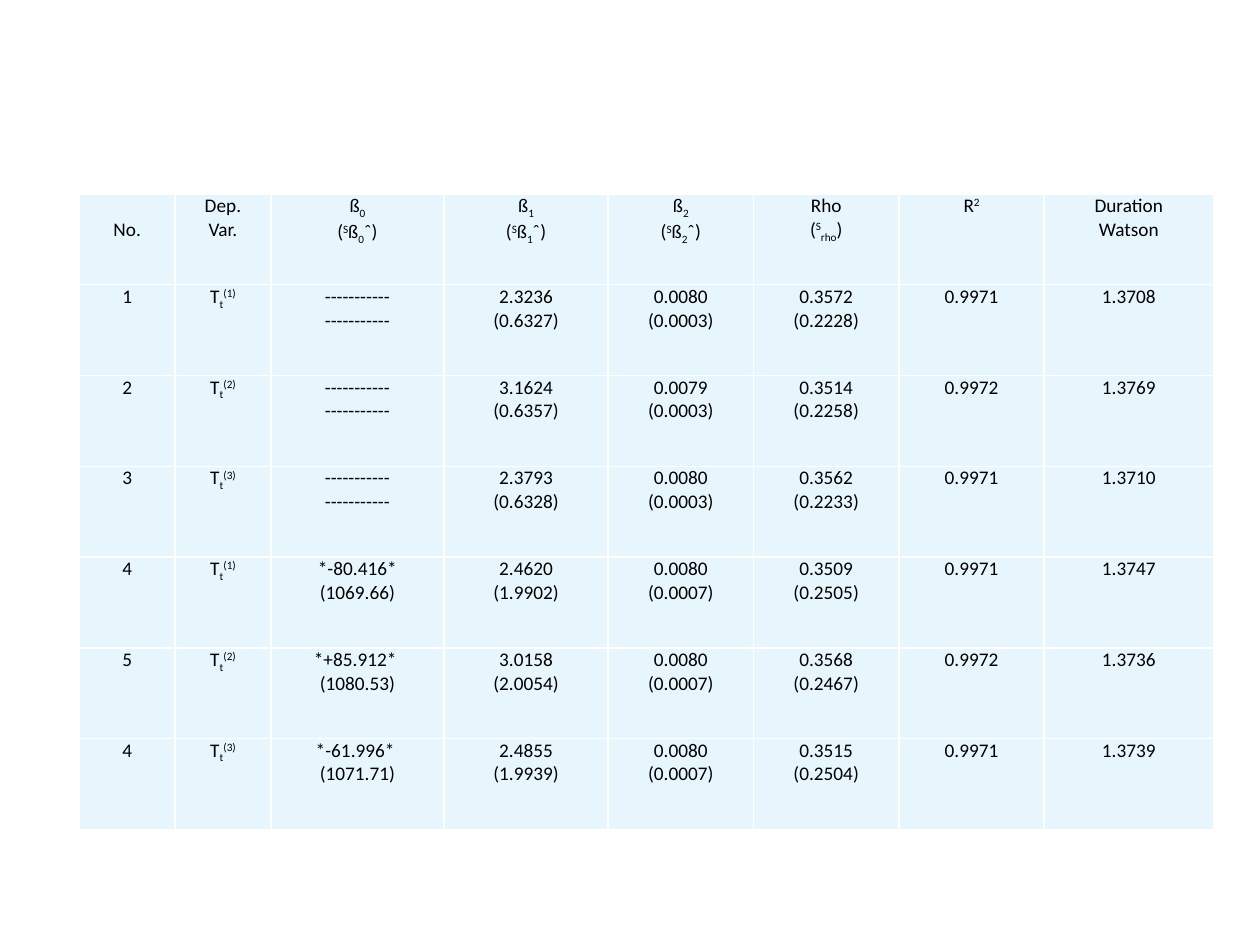
from lxml import etree
from pptx import Presentation
from pptx.dml.color import RGBColor
from pptx.enum import text
from pptx.oxml import ns
from pptx.util import Cm, Pt

# Cell notation: "\n" parts paragraphs, "|" parts spans,
# a leading "_" lowers a span and a leading "^" raises it.
BASELINES = {"_": "-25000", "^": "30000"}
COLUMN_WIDTHS = [1.93, 1.93, 3.49, 3.31, 2.93, 2.93, 2.93, 3.41]
ROW_HEIGHT = 1.83
DASHES = "-----------\n-----------"

# number, series, beta 0, beta 1, beta 2, rho, R squared, Durbin-type statistic
RESULTS = [
    ("1", 1, DASHES, "2.3236\n(0.6327)", "0.0080\n(0.0003)", "0.3572\n(0.2228)", "0.9971", "1.3708"),
    ("2", 2, DASHES, "3.1624\n(0.6357)", "0.0079\n(0.0003)", "0.3514\n(0.2258)", "0.9972", "1.3769"),
    ("3", 3, DASHES, "2.3793\n(0.6328)", "0.0080\n(0.0003)", "0.3562\n(0.2233)", "0.9971", "1.3710"),
    ("4", 1, "*-80.416*\n(1069.66)", "2.4620\n(1.9902)", "0.0080\n(0.0007)", "0.3509\n(0.2505)",
     "0.9971", "1.3747"),
    ("5", 2, "*+85.912* \n(1080.53)", "3.0158\n(2.0054)", "0.0080\n(0.0007)", "0.3568\n(0.2467)",
     "0.9972", "1.3736"),
    ("4", 3, "*-61.996* \n(1071.71)", "2.4855\n(1.9939)", "0.0080\n(0.0007)", "0.3515\n(0.2504)",
     "0.9971", "1.3739"),
]


def color(value):
    return RGBColor.from_string(value)


def beta_heading(index):
    return f"ß|_{index}\n(|^S|ß|_{index}|ˆ)"


def table_rows():
    betas = [beta_heading(index) for index in range(3)]
    heading = ["\tNo.", "Dep.\nVar.", *betas, "Rho\n(|^S|_rho|)", "R|^2", "Duration\nWatson"]
    body = [[number, f"T|_t|^({series})", *values] for number, series, *values in RESULTS]
    return [heading, *body]


def add_span(para, piece):
    span = para.add_run()
    baseline = BASELINES.get(piece[0])
    span.text = piece[1:] if baseline else piece
    span.font.name = "Calibri"
    span.font.size = Pt(11)
    span.font.color.rgb = color("000000")
    if baseline:
        span.font._element.set("baseline", baseline)


def write_cell(cell, content):
    cell.margin_left = cell.margin_right = Cm(0.18)
    cell.margin_top = cell.margin_bottom = 0
    frame = cell.text_frame
    for index, line in enumerate(content.split("\n")):
        para = frame.add_paragraph() if index else frame.paragraphs[0]
        para.alignment = text.PP_ALIGN.CENTER
        for piece in line.split("|"):
            add_span(para, piece)


def add_borders(cell, value):
    properties = cell._tc.get_or_add_tcPr()
    for side in ("lnL", "lnR", "lnT", "lnB"):
        border = etree.SubElement(properties, ns.qn(f"a:{side}"), w=str(Pt(1)))
        fill = etree.SubElement(border, ns.qn("a:solidFill"))
        etree.SubElement(fill, ns.qn("a:srgbClr"), val=value)


def style_cell(cell):
    # Borders come before the fill in the cell properties
    add_borders(cell, "FFFFFF")
    cell.fill.solid()
    cell.fill.fore_color.rgb = color("E7F6FC")


def add_results_table(page, rows):
    frame = page.shapes.add_table(len(rows), len(COLUMN_WIDTHS), Cm(1.6), Cm(3.91),
                                  Cm(sum(COLUMN_WIDTHS)), Cm(ROW_HEIGHT * len(rows)))
    table = frame.table
    table.first_row = table.horz_banding = False
    for column, width in zip(table.columns, COLUMN_WIDTHS):
        column.width = Cm(width)
    for row, contents in zip(table.rows, rows):
        row.height = Cm(ROW_HEIGHT)
        for cell, content in zip(row.cells, contents):
            write_cell(cell, content)
            style_cell(cell)


def main():
    deck = Presentation()
    deck.slide_width, deck.slide_height = Cm(25.4), Cm(19.05)
    page = deck.slides.add_slide(deck.slide_layouts[6])

    # Regression results
    add_results_table(page, table_rows())
    deck.save("out.pptx")


if __name__ == "__main__":
    main()
